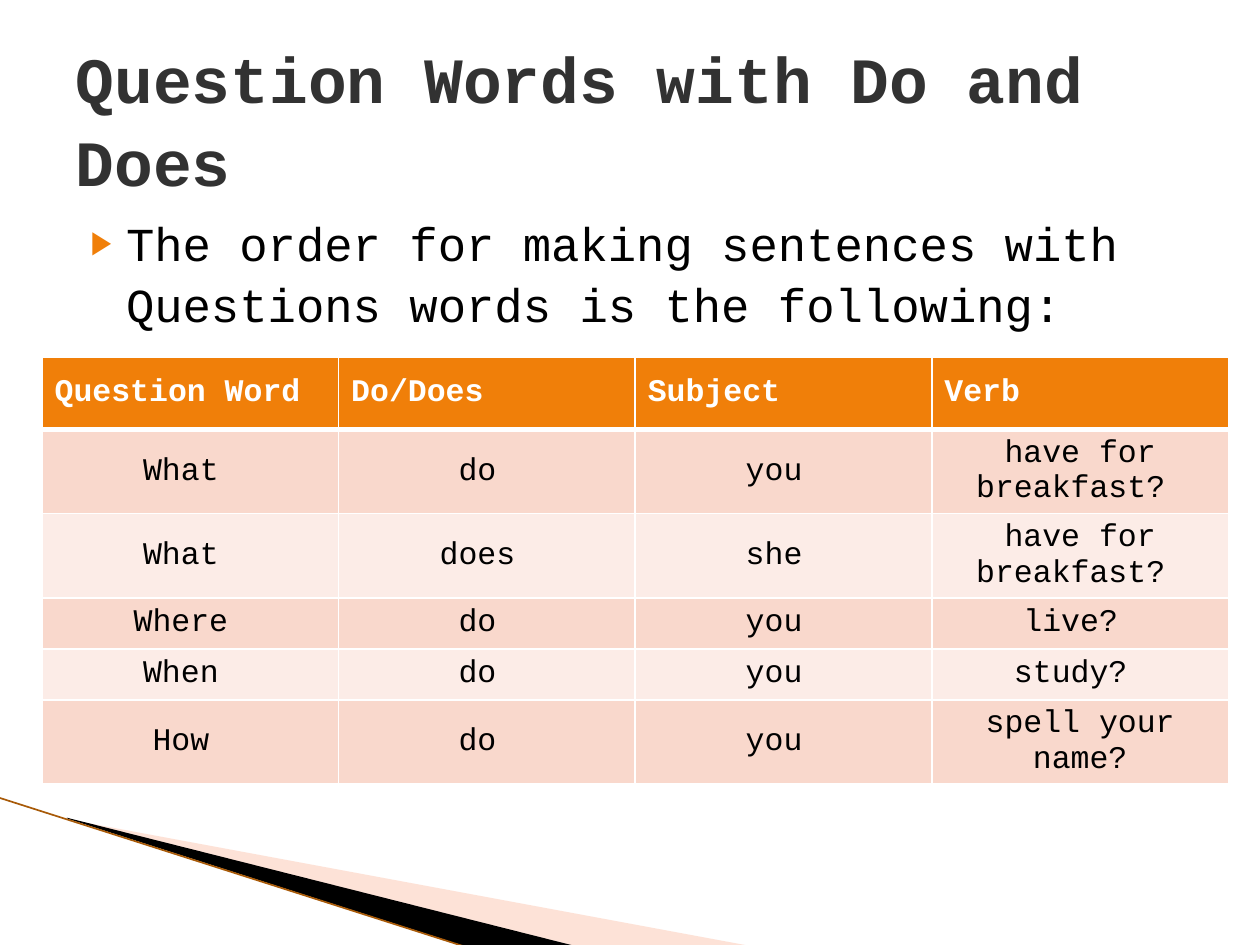
from lxml import etree
from pptx import Presentation
from pptx.dml.color import RGBColor
from pptx.enum import text
from pptx.oxml import parse_xml
from pptx.oxml.ns import nsdecls, qn
from pptx.util import Pt

COLORS = {
    "orange": "F07F09", "brown": "A85A08", "peach": "FCB79B", "black": "000000",
    "gray": "323232", "white": "FFFFFF", "odd row": "F9D8CC", "even row": "FCECE7",
}
FONT = "Courier New"


def color(name):
    return RGBColor.from_string(COLORS[name])


def style(para, size, name, bold=False):
    para.font.name = FONT
    para.font.size = Pt(size)
    para.font.bold = bold
    para.font.color.rgb = color(name)


deck = Presentation()
deck.slide_width, deck.slide_height = Pt(720), Pt(540)
page = deck.slides.add_slide(deck.slide_layouts[1])

wedges = [
    ("peach", [(39.6, 468.4), (428.4, 540.5), (328.3, 540.5), (39.6, 468)]),
    ("black", [(38.2, 467.3), (329, 540.7), (267.8, 541.4), (38.9, 468)]),
]
for name, points in wedges:
    start, *others = [(Pt(x), Pt(y)) for x, y in points]
    builder = page.shapes.build_freeform(*start, scale=1.0)
    builder.add_line_segments(others)
    wedge = builder.convert_to_shape()
    wedge.shadow.inherit = False
    wedge.fill.solid()
    wedge.fill.fore_color.rgb = color(name)
    wedge.line.fill.background()
    if name == "peach":
        shade = wedge.fill._xPr.find(qn("a:solidFill"))[0]
        etree.SubElement(shade, qn("a:alpha"), val="40000")

edge = page.shapes.add_connector(1, Pt(-0.7), Pt(455.8), Pt(267.1), Pt(541.4))
edge.line.color.rgb = color("brown")
edge.line.width = Pt(0.95)
etree.SubElement(edge._element.spPr, qn("a:effectLst"))

title = page.shapes.title
title.left, title.top, title.width, title.height = Pt(36), Pt(21.6), Pt(648), Pt(90)
title.text_frame.text = "Question Words with Do and Does"
title.text_frame.vertical_anchor = text.MSO_ANCHOR.MIDDLE
para = title.text_frame.paragraphs[0]
para.alignment = text.PP_ALIGN.LEFT
para.line_spacing = 1.07
style(para, 36.9, "gray", True)

body = page.placeholders[1]
body.left, body.top, body.width, body.height = Pt(36), Pt(116.6), Pt(648), Pt(356.4)
body.text_frame.text = "The order for making sentences with Questions words is the following:"
para = body.text_frame.paragraphs[0]
para.space_before = Pt(0)
para.line_spacing = 1.07
props = para._p.get_or_add_pPr()
props.set("marL", str(Pt(28.8)))
props.set("indent", str(Pt(-20.2)))
bullet_color = etree.SubElement(props, qn("a:buClr"))
etree.SubElement(bullet_color, qn("a:srgbClr"), val=COLORS["orange"])
etree.SubElement(props, qn("a:buSzPct"), val="68000")
etree.SubElement(props, qn("a:buChar"), char="▶")
style(para, 27, "black")

rows = [
    ("Question Word", "Do/Does", "Subject", "Verb"),
    ("What ", "do ", "you ", "have for breakfast? "),
    ("What ", "does ", "she ", "have for breakfast? "),
    ("Where ", "do ", "you ", "live? "),
    ("When ", "do ", "you ", "study? "),
    ("How ", "do ", "you ", "spell your name?"),
]
table = page.shapes.add_table(6, 4, Pt(24), Pt(204), Pt(678), Pt(189)).table
for column in table.columns:
    column.width = Pt(169.5)
for r, words in enumerate(rows):
    table.rows[r].height = Pt(29.2 if r else 41.5)
    for c, word in enumerate(words):
        cell = table.cell(r, c)
        cell.text = word
        cell.vertical_anchor = text.MSO_ANCHOR.MIDDLE
        para = cell.text_frame.paragraphs[0]
        para.alignment = text.PP_ALIGN.CENTER if r else text.PP_ALIGN.LEFT
        style(para, 18, "black" if r else "white", r == 0)
        borders = {"lnL": 1, "lnR": 1, "lnT": 3 if r == 1 else 1, "lnB": 1 if r else 3}
        for side, width in borders.items():
            cell._tc.get_or_add_tcPr().append(parse_xml(
                f'<a:{side} {nsdecls("a")} w="{Pt(width)}"><a:solidFill>'
                f'<a:srgbClr val="{COLORS["white"]}"/></a:solidFill></a:{side}>'))
        cell.fill.solid()
        cell.fill.fore_color.rgb = color(("even row", "odd row")[r % 2] if r else "orange")

deck.save("out.pptx")
